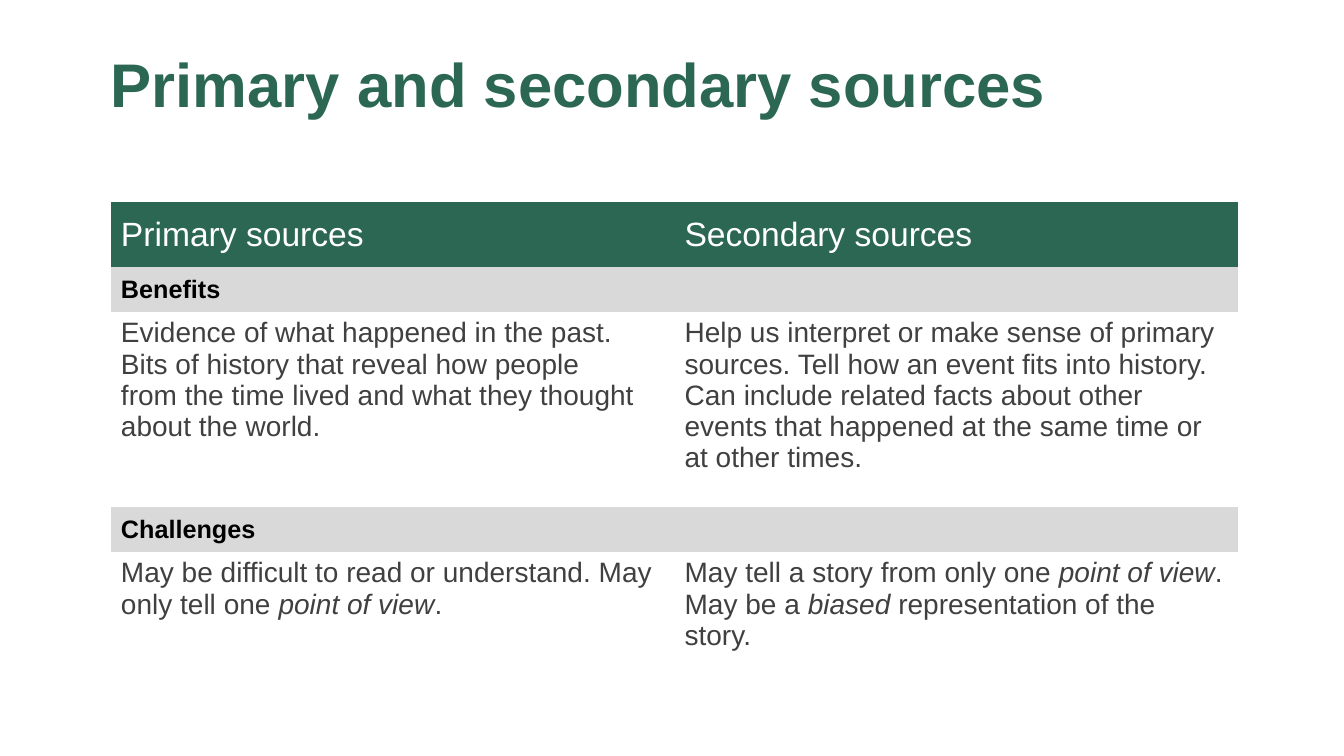
import pptx
import pptx.dml.color
import pptx.enum.text
import pptx.oxml.ns
import pptx.util

COLORS = {
    "green": "2C6754",
    "white": "FFFFFF",
    "gray": "D9D9D9",
    "black": "000000",
    "text": "404040",
}
FONT = "Arial"
PX = 9144
PLAIN_TABLE_STYLE = "{2D5ABB26-0587-4C30-8999-92F81FD0307C}"
COLUMN_WIDTHS = [559, 559]
ROWS = [
    (65, "header", ["Primary sources", "Secondary sources"]),
    (45, "section", ["Benefits"]),
    (193, "body", [
        "Evidence of what happened in the past. Bits of history that reveal how people \n"
        "from the time lived and what they thought about the world.",
        "Help us interpret or make sense of primary sources. Tell how an event fits into "
        "history. Can include related facts about other events that happened at the same "
        "time or at other times.",
    ]),
    (45, "section", ["Challenges"]),
    (122, "body", [
        "May be difficult to read or understand. May only tell one *point of view*.",
        "May tell a story from only one *point of view*. May be a *biased *representation "
        "of the story.",
    ]),
]


def px(length):
    """Turn whole pixels into EMU."""
    return pptx.util.Emu(length * PX)


def rgb(name):
    """Look up a named colour."""
    return pptx.dml.color.RGBColor.from_string(COLORS[name])


class SlideBuilder:
    """Holds the text styles and the current slide."""

    styles = {
        "title": {"size": 44, "color": "green", "bold": True},
        "header": {"size": 24, "color": "white", "bold": False, "fill": "green"},
        "section": {"size": 18, "color": "black", "bold": True, "fill": "gray"},
        "body": {"size": 20, "color": "text", "bold": False, "fill": "white"},
    }

    def __init__(self, presentation):
        """Add a title-only slide."""
        self.slide = presentation.slides.add_slide(presentation.slide_layouts[5])

    def add_text(self, paragraph, text, style_name):
        """Add runs, with asterisks around italic words."""
        style = self.styles[style_name]
        for index, part in enumerate(text.split("*")):
            for line_number, line in enumerate(part.split("\n")):
                if line_number:
                    paragraph.add_line_break()
                run = paragraph.add_run()
                run.text = line
                run.font.name = FONT
                run.font.size = pptx.util.Pt(style["size"])
                run.font.bold = style["bold"]
                run.font.italic = index % 2 == 1
                run.font.color.rgb = rgb(style["color"])

    def title(self, text, left, top, width, height):
        """Place and format the title placeholder."""
        shape = self.slide.shapes.title
        shape.left, shape.top, shape.width, shape.height = map(px, (left, top, width, height))
        frame = shape.text_frame
        frame.margin_left = frame.margin_right = frame.margin_top = frame.margin_bottom = 0
        frame.vertical_anchor = pptx.enum.text.MSO_ANCHOR.TOP
        frame.word_wrap = True
        frame.auto_size = pptx.enum.text.MSO_AUTO_SIZE.NONE
        paragraph = frame.paragraphs[0]
        paragraph.alignment = pptx.enum.text.PP_ALIGN.LEFT
        paragraph.line_spacing = 0.9
        self.add_text(paragraph, text, "title")

    def table(self, rows, column_widths, left, top):
        """Add a table whose single-text rows span all columns."""
        height = sum(row[0] for row in rows)
        frame = self.slide.shapes.add_table(
            len(rows), len(column_widths), px(left), px(top), px(sum(column_widths)), px(height))
        table = frame.table
        table.first_row = table.horz_banding = False
        properties = table._tbl.tblPr
        properties.find(pptx.oxml.ns.qn("a:tableStyleId")).text = PLAIN_TABLE_STYLE
        for column, width in zip(table.columns, column_widths):
            column.width = px(width)
        for row_index, (row_height, style_name, texts) in enumerate(rows):
            table.rows[row_index].height = px(row_height)
            cells = list(table.rows[row_index].cells)
            for cell in cells:
                cell.fill.solid()
                cell.fill.fore_color.rgb = rgb(self.styles[style_name]["fill"])
            if len(texts) == 1:
                cells[0].merge(cells[-1])
            for cell, text in zip(cells, texts):
                anchors = pptx.enum.text.MSO_ANCHOR
                cell.vertical_anchor = anchors.TOP if style_name == "body" else anchors.MIDDLE
                self.add_text(cell.text_frame.paragraphs[0], text, style_name)


def main():
    """Build and save the slide."""
    presentation = pptx.Presentation()
    presentation.slide_width, presentation.slide_height = px(1333), px(750)
    builder = SlideBuilder(presentation)
    builder.title("Primary and secondary sources", 110, 54, 1078, 141)
    builder.table(ROWS, COLUMN_WIDTHS, 110, 200)
    presentation.save("out.pptx")


if __name__ == "__main__":
    main()
